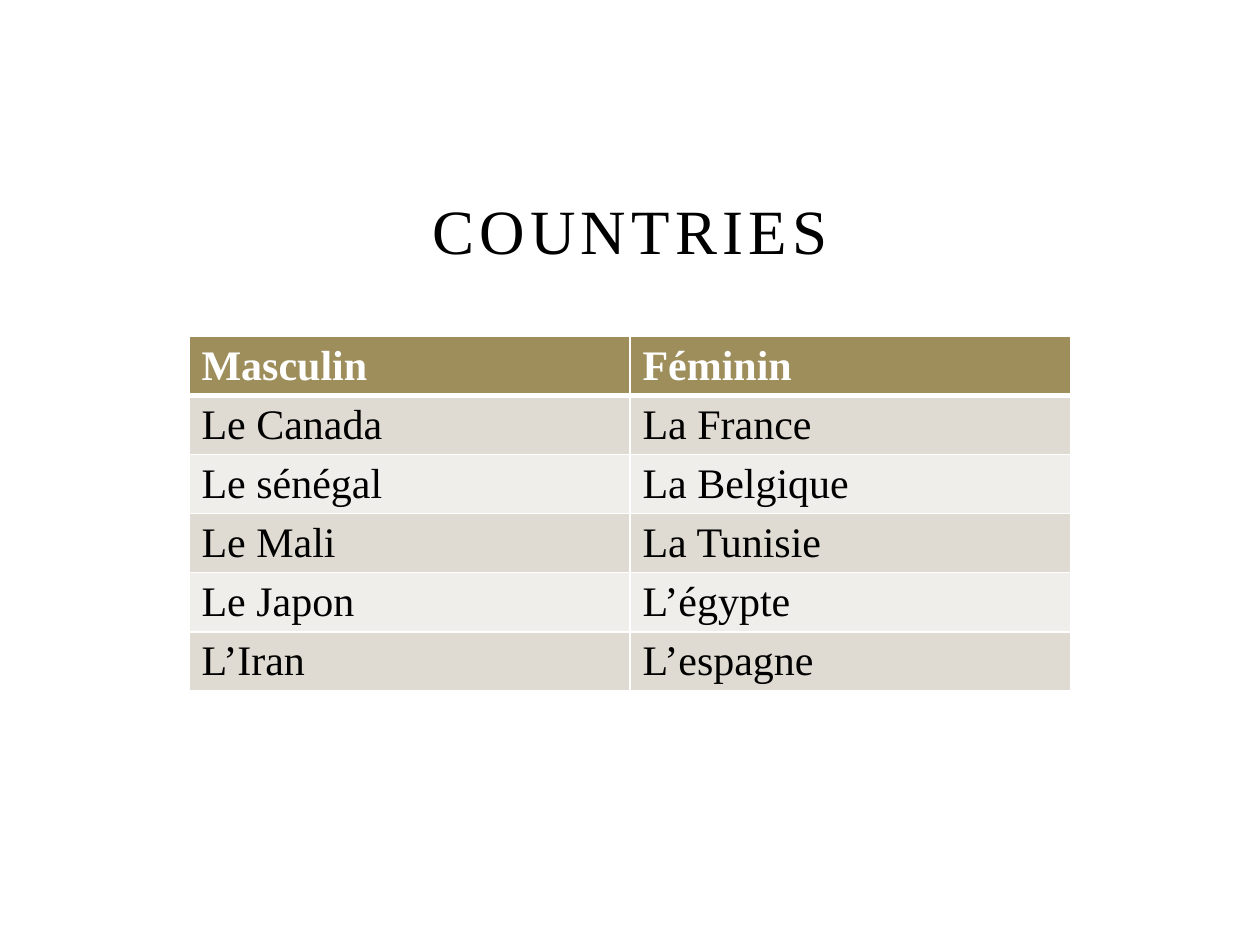
from dataclasses import dataclass

from lxml.etree import SubElement
from pptx import Presentation
from pptx.dml.color import RGBColor
from pptx.enum.text import MSO_ANCHOR, MSO_AUTO_SIZE, PP_ALIGN
from pptx.oxml.ns import qn
from pptx.slide import Slide
from pptx.table import _Cell
from pptx.text.text import Font
from pptx.util import Inches, Pt


@dataclass(frozen=True)
class Theme:
    font: str = "Times New Roman"
    title_size: int = 36
    table_size: int = 24
    title_spacing: int = 3
    ink: str = "000000"
    white: str = "FFFFFF"
    header: str = "9E8E5C"
    bands: tuple[str, str] = ("DFDBD2", "F0EEEA")
    thin_border: int = 1
    header_border: int = 3


@dataclass(frozen=True)
class CountryRow:
    masculine: str
    feminine: str


THEME = Theme()
COUNTRIES = [
    CountryRow("Masculin", "Féminin"),
    CountryRow("Le Canada", "La France"),
    CountryRow("Le sénégal", "La Belgique"),
    CountryRow("Le Mali", "La Tunisie"),
    CountryRow("Le Japon", "L’égypte"),
    CountryRow("L’Iran", "L’espagne"),
]
LEFT, WIDTH = Inches(1.5), Inches(7)
ROW_HEIGHT = Inches(0.41)


def style_font(font: Font, size: int, color: str, bold: bool = False) -> None:
    font.name = THEME.font
    font.size = Pt(size)
    font.bold = bold
    font.color.rgb = RGBColor.from_string(color)


def add_borders(cell: _Cell, top: int, bottom: int) -> None:
    properties = cell._tc.get_or_add_tcPr()
    widths = {"L": THEME.thin_border, "R": THEME.thin_border, "T": top, "B": bottom}
    for side, width in widths.items():
        border = SubElement(properties, qn(f"a:ln{side}"), w=str(Pt(width)))
        SubElement(SubElement(border, qn("a:solidFill")), qn("a:srgbClr"), val=THEME.white)


def fill_cell(cell: _Cell, country: str, row_index: int) -> None:
    is_header = row_index == 0
    add_borders(
        cell,
        top=THEME.header_border if row_index == 1 else THEME.thin_border,
        bottom=THEME.header_border if is_header else THEME.thin_border,
    )
    background = THEME.header if is_header else THEME.bands[(row_index - 1) % 2]
    cell.fill.solid()
    cell.fill.fore_color.rgb = RGBColor.from_string(background)
    cell.text_frame.text = country
    color = THEME.white if is_header else THEME.ink
    style_font(cell.text_frame.paragraphs[0].runs[0].font, THEME.table_size, color, is_header)


def add_heading(slide: Slide, wording: str) -> None:
    heading = slide.shapes.title
    heading.left, heading.top = LEFT, Inches(1.42)
    heading.width, heading.height = WIDTH, Inches(0.75)
    frame = heading.text_frame
    frame.text = wording
    frame.word_wrap = True
    frame.auto_size = MSO_AUTO_SIZE.NONE
    frame.vertical_anchor = MSO_ANCHOR.BOTTOM
    paragraph = frame.paragraphs[0]
    paragraph.alignment = PP_ALIGN.CENTER
    font = paragraph.runs[0].font
    style_font(font, THEME.title_size, THEME.ink)
    font._element.set("spc", str(THEME.title_spacing * 100))


def add_country_table(slide: Slide, countries: list[CountryRow]) -> None:
    table = slide.shapes.add_table(
        len(countries), 2, LEFT, Inches(2.67), WIDTH, ROW_HEIGHT * len(countries)
    ).table
    for row_index, country in enumerate(countries):
        fill_cell(table.cell(row_index, 0), country.masculine, row_index)
        fill_cell(table.cell(row_index, 1), country.feminine, row_index)


def main() -> None:
    presentation = Presentation()
    presentation.slide_width = Inches(10)
    presentation.slide_height = Inches(7.5)
    slide = presentation.slides.add_slide(presentation.slide_layouts[5])
    add_heading(slide, "COUNTRIES")
    add_country_table(slide, COUNTRIES)
    presentation.save("out.pptx")


if __name__ == "__main__":
    main()
